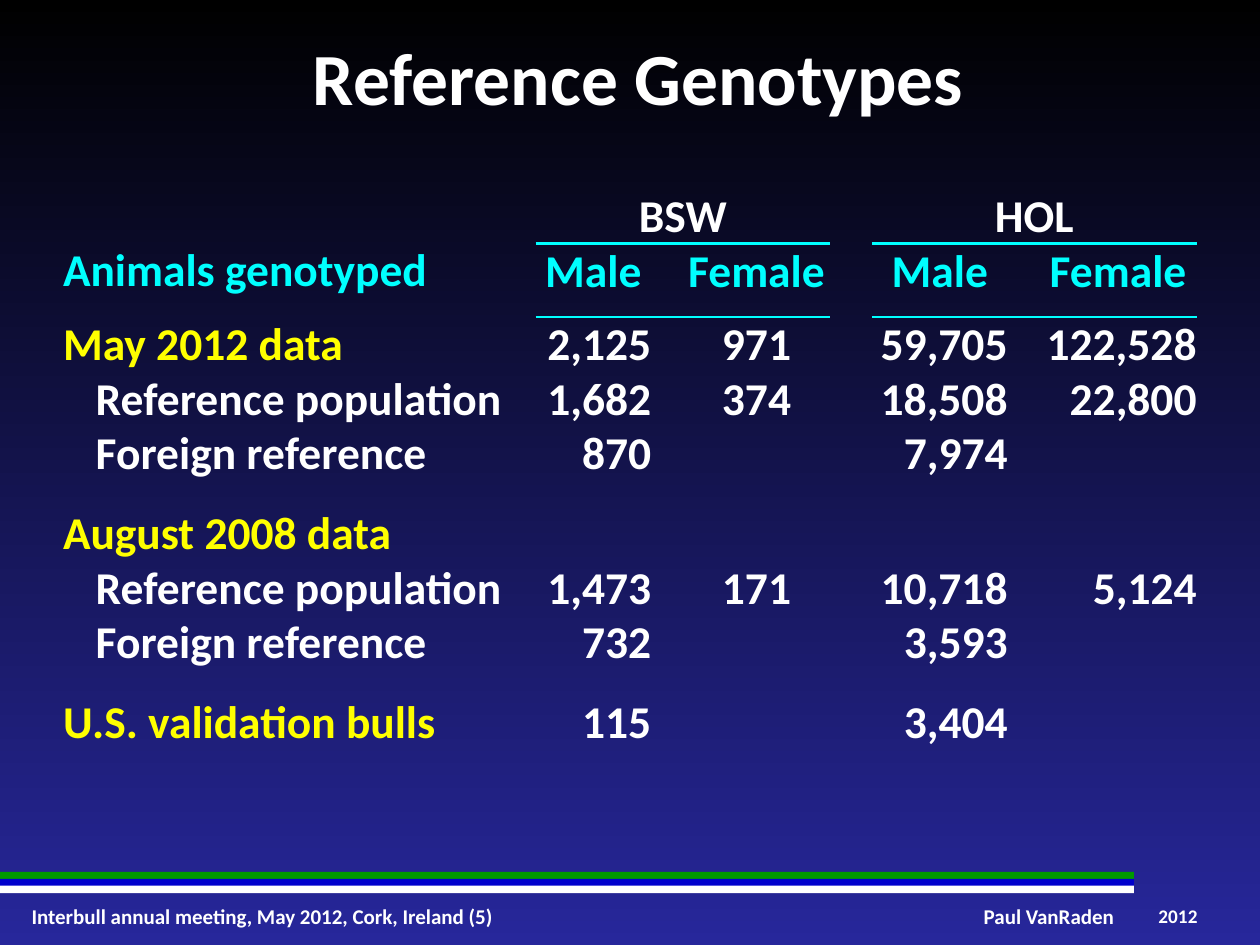
from lxml import etree
from pptx import Presentation
from pptx import util as u
from pptx.dml.color import RGBColor
from pptx.enum import shapes, text
from pptx.oxml import ns

COLORS = {"black": "000000", "navy": "27279B", "white": "FFFFFF", "cyan": "00FFFF",
          "yellow": "FFFF00", "green": "009900", "blue": "0000CC"}
LEFT, CENTER, RIGHT = text.PP_ALIGN.LEFT, text.PP_ALIGN.CENTER, text.PP_ALIGN.RIGHT
TOP, MIDDLE, BOTTOM = text.MSO_ANCHOR.TOP, text.MSO_ANCHOR.MIDDLE, text.MSO_ANCHOR.BOTTOM
PLAIN_TABLE = "{2D5ABB26-0587-4C30-8999-92F81FD0307C}"

COLUMNS = [3.75, 0.92, 0.25, 1.17, 0.33, 1.08, 0.25, 1.25]
VALUE_COLUMNS = [(1, RIGHT), (3, CENTER), (5, RIGHT), (7, RIGHT)]
BREEDS = {1: "BSW", 5: "HOL"}
SEXES = {1: "Male", 3: "Female", 5: "Male", 7: "Female"}
ROW, HEADER_GAP, GROUP_GAP, INDENT = 0.41, 0.15, 0.2, 0.26
GENOTYPES = [
    ("May 2012 data", ["2,125", "971", "59,705", "122,528"]),
    ("Reference population", ["1,682", "374", "18,508", "22,800"]),
    ("Foreign reference", ["870", "", "7,974", ""]),
    ("August 2008 data", ["", "", "", ""]),
    ("Reference population", ["1,473", "171", "10,718", "5,124"]),
    ("Foreign reference", ["732", "", "3,593", ""]),
    ("U.S. validation bulls", ["115", "", "3,404", ""]),
]
FOOTERS = [
    ("Interbull annual meeting, May 2012, Cork, Ireland (5)", (0.25, 7.17, 4.39, 0.2), 12, LEFT, True),
    ("Paul VanRaden", (7.8, 7.17, 1.05, 0.2), 12, CENTER, False),
    ("2012", (9.17, 7.17, 0.36, 0.19), 11, CENTER, True),
]


class SlideBuilder:
    font = {"name": "Calibri", "bold": True}

    def __init__(self, page):
        self.page = page

    def color(self, name):
        return RGBColor.from_string(COLORS[name])

    def background(self, first, last):
        fill = self.page.background.fill
        fill.gradient()
        fill.gradient_angle = 270
        for stop, name, position in zip(fill.gradient_stops, (first, last), (0, 1)):
            stop.color.rgb = self.color(name)
            stop.position = position

    def add_words(self, frame, words, size, color="white", align=LEFT, indent=0):
        para = frame.paragraphs[0]
        para.alignment = align
        if indent:
            properties = para._p.get_or_add_pPr()
            properties.set("marL", str(u.Inches(indent)))
            properties.set("indent", "0")
        span = para.add_run()
        span.text = words
        for key, value in {**self.font, "size": u.Pt(size)}.items():
            setattr(span.font, key, value)
        span.font.color.rgb = self.color(color)

    def margins(self, target, bottom=0):
        for side in ("left", "right", "top"):
            setattr(target, f"margin_{side}", 0)
        target.margin_bottom = u.Inches(bottom)

    def title(self, words, place):
        box = self.page.shapes.title
        box.left, box.top, box.width, box.height = map(u.Inches, place)
        frame = box.text_frame
        self.margins(frame)
        frame.vertical_anchor = TOP
        frame.auto_size = text.MSO_AUTO_SIZE.NONE
        self.add_words(frame, words, 42, align=CENTER)

    def label(self, words, place, size, align, wrap):
        frame = self.page.shapes.add_textbox(*map(u.Inches, place)).text_frame
        self.margins(frame)
        frame.word_wrap = wrap
        frame.vertical_anchor = MIDDLE
        self.add_words(frame, words, size, align=align)

    def bar(self, place, color):
        shape = self.page.shapes.add_shape(shapes.MSO_SHAPE.RECTANGLE, *map(u.Inches, place))
        shape.shadow.inherit = False
        shape.fill.solid()
        shape.fill.fore_color.rgb = self.color(color)
        shape.line.fill.background()

    def table(self, place, widths, row_count):
        frame = self.page.shapes.add_table(row_count, len(widths), *map(u.Inches, place))
        table = frame.table
        table.first_row = table.horz_banding = False
        table._tbl.tblPr.find(ns.qn("a:tableStyleId")).text = PLAIN_TABLE
        for column, width in zip(table.columns, widths):
            column.width = u.Inches(width)
        for row in table.rows:
            row.height = u.Inches(ROW)
        for cell in table.iter_cells():
            self.margins(cell)
            cell.fill.background()
        return table

    def cell(self, cell, words, color="white", align=LEFT, anchor=TOP, gap=0, indent=0):
        self.margins(cell, gap)
        cell.vertical_anchor = anchor
        if words:
            self.add_words(cell.text_frame, words, 26, color, align, indent)

    def border(self, cell, edge, width):
        line = etree.Element(ns.qn(f"a:{edge}"), w=str(u.Pt(width)))
        fill = etree.SubElement(line, ns.qn("a:solidFill"))
        etree.SubElement(fill, ns.qn("a:srgbClr"), val=COLORS["cyan"])
        cell._tc.get_or_add_tcPr().insert(0, line)


def fill_header(slide, table):
    for column in (0, 4):
        table.cell(0, column).merge(table.cell(1, column))
    slide.cell(table.cell(0, 0), "Animals genotyped", "cyan", anchor=BOTTOM, gap=HEADER_GAP)
    for start, breed in BREEDS.items():
        table.cell(0, start).merge(table.cell(0, start + 2))
        slide.cell(table.cell(0, start), breed, align=CENTER, anchor=BOTTOM)
        for column in range(start, start + 3):
            slide.border(table.cell(0, column), "lnB", 1.5)
            slide.border(table.cell(1, column), "lnB", 1)
            slide.border(table.cell(1, column), "lnT", 1.5)
    for column, sex in SEXES.items():
        slide.cell(table.cell(1, column), sex, "cyan", CENTER, BOTTOM, HEADER_GAP)


def fill_genotypes(slide, table):
    for row, (name, values) in enumerate(GENOTYPES, 2):
        detail = name.endswith(("population", "reference"))
        gap = GROUP_GAP if name == "Foreign reference" else 0
        slide.cell(table.cell(row, 0), name, "white" if detail else "yellow",
                   gap=gap, indent=INDENT if detail else 0)
        for (column, align), value in zip(VALUE_COLUMNS, values):
            slide.cell(table.cell(row, column), value, align=align, gap=gap)


def main():
    deck = Presentation()
    deck.slide_width, deck.slide_height = u.Inches(10), u.Inches(7.5)
    slide = SlideBuilder(deck.slides.add_slide(deck.slide_layouts[5]))
    slide.background("black", "navy")
    for footer in FOOTERS:
        slide.label(*footer)
    for index, color in enumerate(("green", "blue", "white")):
        slide.bar((0, 6.92 + index * 0.055, 9, 0.06), color)
    row_count = len(GENOTYPES) + 2
    table = slide.table((0.5, 1.5, 9, ROW * row_count), COLUMNS, row_count)
    fill_header(slide, table)
    fill_genotypes(slide, table)
    slide.title(" Reference Genotypes", (0.5, 0.25, 9, 0.75))
    deck.save("out.pptx")


if __name__ == "__main__":
    main()
